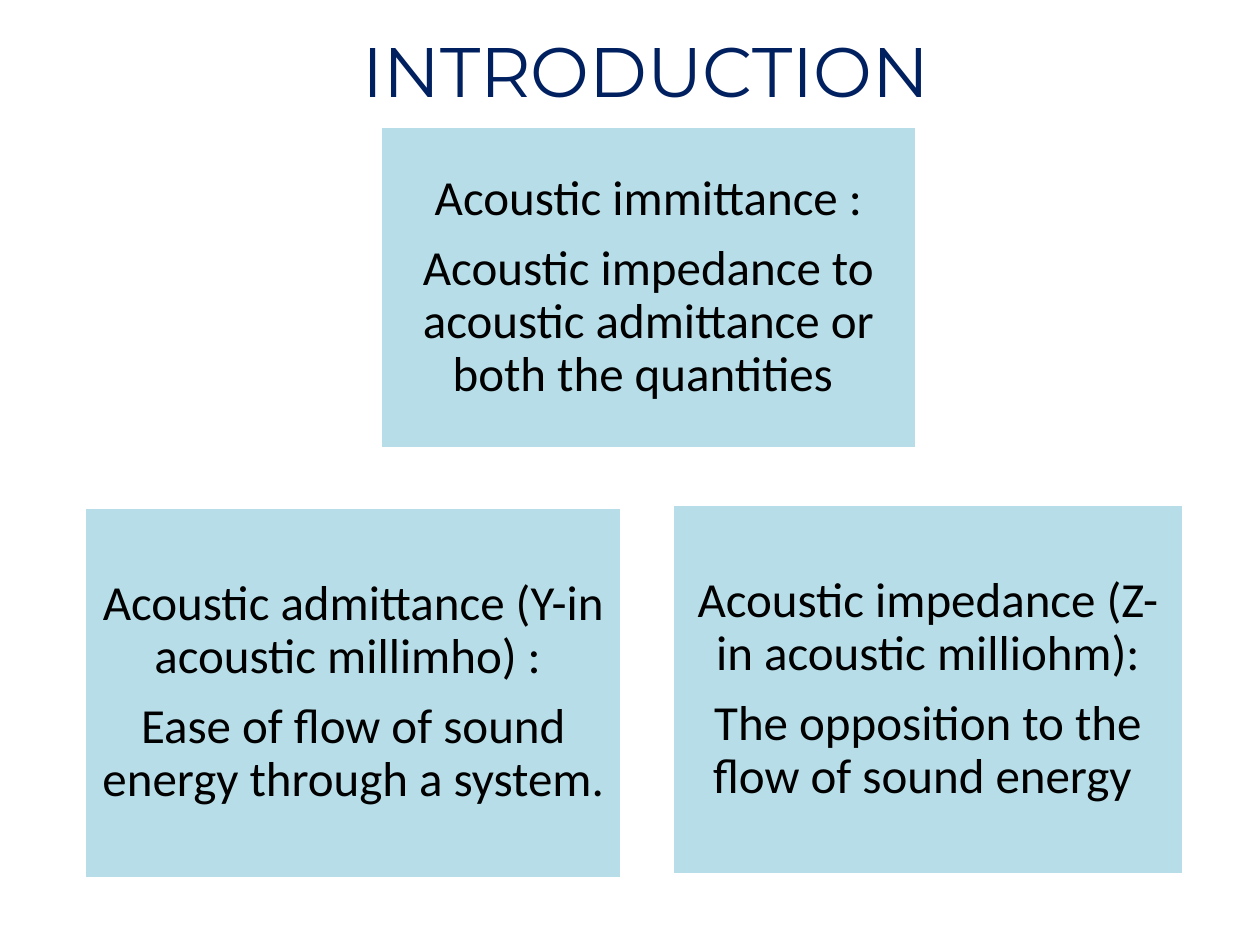
from dataclasses import dataclass

from pptx import Presentation
from pptx.dml.color import RGBColor
from pptx.enum.shapes import MSO_SHAPE
from pptx.enum.text import MSO_ANCHOR, MSO_AUTO_SIZE, PP_ALIGN
from pptx.util import Cm, Pt

RECTANGLE = MSO_SHAPE.RECTANGLE
MIDDLE = MSO_ANCHOR.MIDDLE
CENTER = PP_ALIGN.CENTER
FIT_SHAPE = MSO_AUTO_SIZE.SHAPE_TO_FIT_TEXT

PALE_BLUE = RGBColor(0xB7, 0xDE, 0xE8)
NAVY = RGBColor(0x00, 0x20, 0x60)
BLACK = RGBColor(0, 0, 0)
WHITE = RGBColor(0xFF, 0xFF, 0xFF)

CARD_MARGIN = Cm(0.3)
BLANK_LAYOUT = 6


@dataclass
class Card:
    left: float
    top: float
    width: float
    height: float
    term: str
    meaning: str


CARDS = [
    Card(7.66, 2.54, 10.82, 6.5, "Acoustic immittance :",
         "Acoustic impedance to acoustic admittance or both the quantities "),
    Card(13.55, 10.16, 10.31, 7.47, "Acoustic impedance (Z- in acoustic milliohm):",
         "The opposition to the flow of sound energy "),
    Card(1.7, 10.22, 10.84, 7.49, "Acoustic admittance (Y-in acoustic millimho) : ",
         "Ease of flow of sound energy through a system."),
]


def write_paragraph(paragraph, text: str, *, font: str, size: float, color: RGBColor,
                    line_spacing: float = 1.0, space_after: float = 0) -> None:
    paragraph.alignment = CENTER
    paragraph.line_spacing = line_spacing
    paragraph.space_after = Pt(space_after)
    span = paragraph.add_run()
    span.text = text
    span.font.name = font
    span.font.size = Pt(size)
    span.font.color.rgb = color


def draw_card(page, card: Card) -> None:
    box = page.shapes.add_shape(RECTANGLE, Cm(card.left), Cm(card.top),
                                Cm(card.width), Cm(card.height))
    box.shadow.inherit = False
    box.fill.solid()
    box.fill.fore_color.rgb = PALE_BLUE
    box.line.color.rgb = WHITE
    box.line.width = Pt(2)

    frame = box.text_frame
    frame.word_wrap = True
    frame.vertical_anchor = MIDDLE
    frame.margin_left = frame.margin_right = CARD_MARGIN
    frame.margin_top = frame.margin_bottom = CARD_MARGIN
    style = dict(font="Calibri", size=28, color=BLACK, line_spacing=0.9)
    write_paragraph(frame.paragraphs[0], card.term, space_after=9.8, **style)
    write_paragraph(frame.add_paragraph(), card.meaning, **style)


def draw_title(page, text: str) -> None:
    box = page.shapes.add_textbox(Cm(6.55), Cm(0.43), Cm(12.93), Cm(1.96))
    frame = box.text_frame
    frame.word_wrap = False
    frame.auto_size = FIT_SHAPE
    write_paragraph(frame.paragraphs[0], text, font="Montserrat", size=40, color=NAVY)


def main() -> None:
    deck = Presentation()
    deck.slide_width, deck.slide_height = Cm(25.4), Cm(19.05)
    page = deck.slides.add_slide(deck.slide_layouts[BLANK_LAYOUT])

    # Definitions
    for card in CARDS:
        draw_card(page, card)

    # Heading
    draw_title(page, "INTRODUCTION")

    deck.save("out.pptx")


if __name__ == "__main__":
    main()
